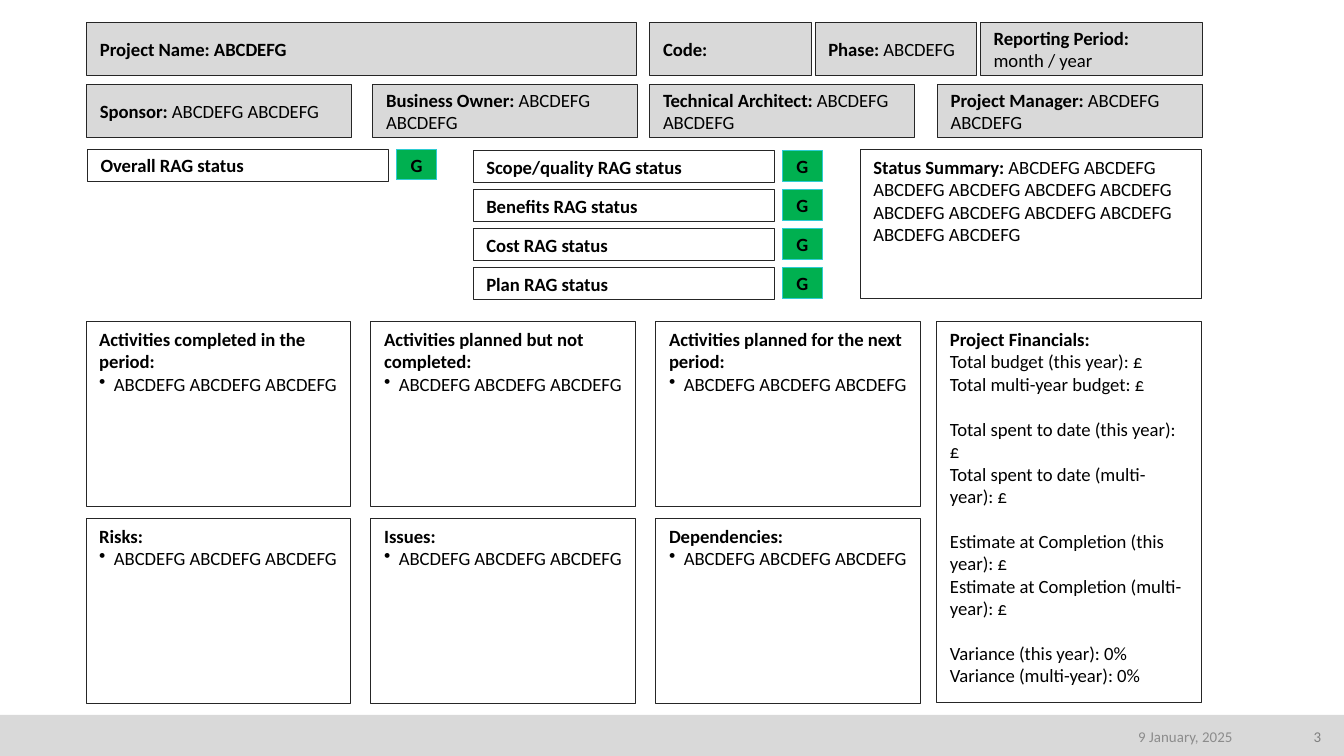
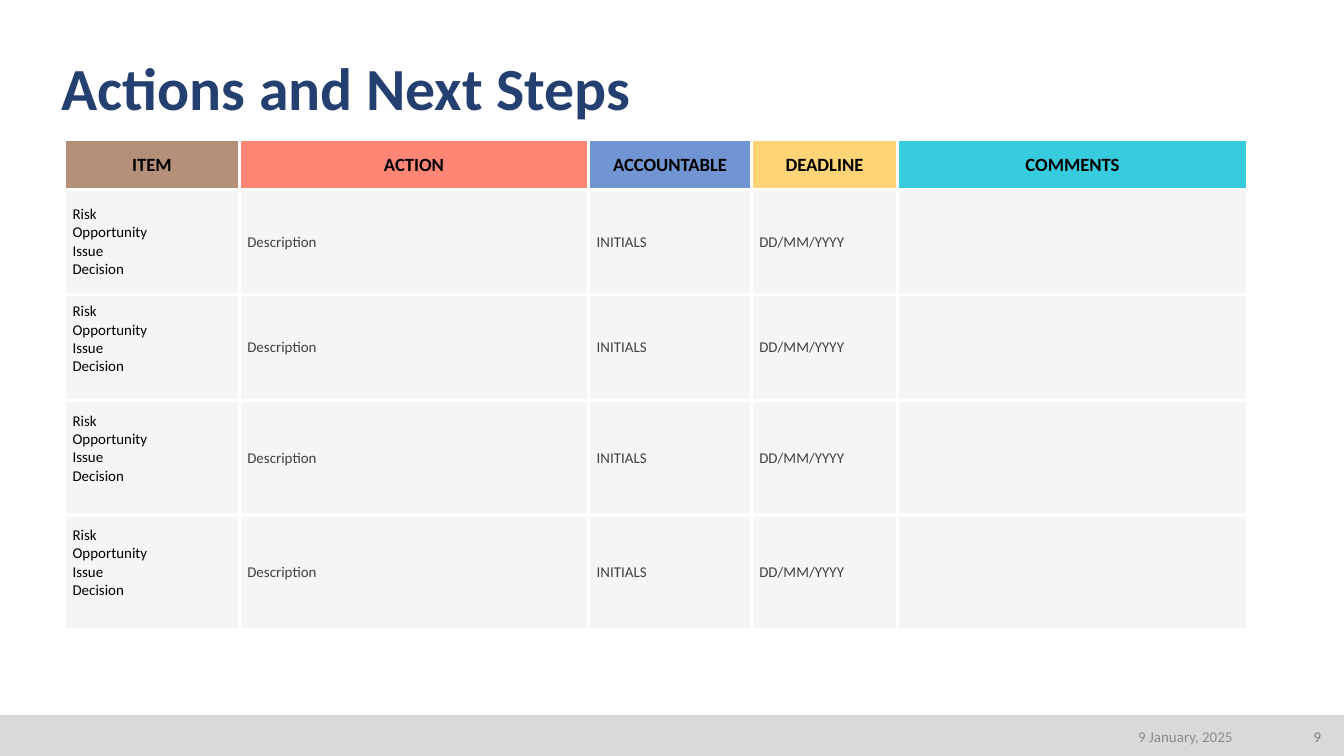
from collections import namedtuple

from lxml import etree
from pptx import Presentation
from pptx import util as u
from pptx.dml.color import RGBColor
from pptx.enum import shapes, text
from pptx.oxml.ns import qn

COLOURS = {
    "band": "D9D9D9", "outline": "262626", "ink": "000000", "title": "244071",
    "green": "00B050", "green_edge": "2DCCD3", "number": "808080", "date": "8C8C8C",
    "cell": "F5F5F5", "cell_text": "404040", "white": "FFFFFF", "item": "B39077",
    "action": "FF8674", "accountable": "7194D2", "deadline": "FFD477", "comments": "36CCDE",
}
FONT = "Calibri"
WIDTH, HEIGHT = 10, 5.625
UNIT = 0.1
FILLER = "ABCDEFG"
LEFT, CENTRE = text.PP_ALIGN.LEFT, text.PP_ALIGN.CENTER
RIGHT, JUSTIFY = text.PP_ALIGN.RIGHT, text.PP_ALIGN.JUSTIFY
TOP, MIDDLE, BOTTOM = text.MSO_ANCHOR.TOP, text.MSO_ANCHOR.MIDDLE, text.MSO_ANCHOR.BOTTOM


class Box(namedtuple("Box", "left top width height")):
    def area(self, column, row, columns, rows):
        return Box(self.left + column * UNIT, self.top + row * UNIT,
                   columns * UNIT, rows * UNIT)

    def lengths(self):
        return [u.Inches(value) for value in self]


def colour(name):
    return RGBColor.from_string(COLOURS[name])


def apply(target, values):
    for name, value in values.items():
        setattr(target, name, value)


def add_span(para, words, bold=False, size=10, ink="ink"):
    span = para.add_run()
    span.text = words
    apply(span.font, {"name": FONT, "size": u.Pt(size), "bold": bold})
    span.font.color.rgb = colour(ink)


def add_bullet(para):
    properties = para._p.get_or_add_pPr()
    properties.set("marL", str(u.Inches(0.11)))
    properties.set("indent", str(u.Inches(-0.11)))
    etree.SubElement(properties, qn("a:buChar")).set("char", "•")


def add_paragraph(frame, index, **values):
    para = frame.add_paragraph() if index else frame.paragraphs[0]
    apply(para, values)
    return para


def add_label(page, box, words, bold=False, size=10, ink="ink", align=LEFT,
              anchor=MIDDLE, margins=None, spacing=None):
    frame = page.shapes.add_textbox(*box.lengths()).text_frame
    apply(frame, {"word_wrap": True, "vertical_anchor": anchor})
    apply(frame, margins or {})
    add_span(add_paragraph(frame, 0, alignment=align, line_spacing=spacing),
             words, bold, size, ink)


def add_rectangle(page, box, fill=None, line=None):
    shape = page.shapes.add_shape(shapes.MSO_SHAPE.RECTANGLE, *box.lengths())
    shape.shadow.inherit = False
    if fill:
        shape.fill.solid()
        shape.fill.fore_color.rgb = colour(fill)
    else:
        shape.fill.background()
    if line:
        shape.line.color.rgb = colour(line)
        shape.line.width = u.Pt(0.5)
    else:
        shape.line.fill.background()
    return shape


def add_field(page, box, heading, value="", fill=None, line="outline",
              align=LEFT, anchor=MIDDLE):
    frame = add_rectangle(page, box, fill, line).text_frame
    apply(frame, {"word_wrap": True, "vertical_anchor": anchor})
    para = add_paragraph(frame, 0, alignment=align)
    add_span(para, heading, bold=True)
    if value:
        add_span(para, value)
    return frame


def add_footer(page, box, number):
    add_rectangle(page, box, "band")
    add_label(page, box.area(70.2, 0.3, 22.5, 2.6), "9 January, 2025",
              size=8, ink="date", align=RIGHT)
    add_label(page, box.area(95.6, 0.3, 3.7, 2.6), number,
              size=8, ink="number", align=RIGHT)


def add_project_header(page, box):
    for column, columns, heading, value in [
        (0, 40.9, f"Project Name: {FILLER}", ""),
        (41.9, 12, "Code:", ""),
        (54.2, 12, "Phase: ", FILLER),
        (66.5, 16.5, "Reporting Period: ", "month / year"),
    ]:
        add_field(page, box.area(column, 0, columns, 3.9), heading, value, "band")
    roles = ["Sponsor", "Business Owner", "Technical Architect", "Project Manager"]
    for column, role in zip([0, 21.3, 41.9, 63.3], roles):
        add_field(page, box.area(column, 4.6, 19.7, 3.9), f"{role}: ",
                  f"{FILLER} {FILLER}", "band")


def add_rating(page, box, name):
    add_field(page, box.area(0, 0, 22.4, 2.4), f"{name} RAG status")
    add_field(page, box.area(23, 0, 3, 2.3), "G", fill="green",
              line="green_edge", align=CENTRE)


def add_status(page, box):
    add_rating(page, box.area(0, 0, 26, 2.4), "Overall")
    for index, name in enumerate(["Scope/quality", "Benefits", "Cost", "Plan"]):
        add_rating(page, box.area(28.7, 0.1 + 2.9 * index, 26, 2.4), name)
    add_field(page, box.area(57.5, 0, 25.4, 11.1), "Status Summary: ",
              " ".join([FILLER] * 12), anchor=TOP)


def add_panels(page, box):
    headings = [
        "Activities completed in the period:",
        "Activities planned but not completed:",
        "Activities planned for the next period:",
        "Risks:", "Issues:", "Dependencies:",
    ]
    for index, heading in enumerate(headings):
        row, column = divmod(index, 3)
        frame = add_field(page, box.area(21.2 * column, 14.65 * row, 19.7, 13.8),
                          heading, anchor=TOP)
        para = add_paragraph(frame, 1)
        add_bullet(para)
        add_span(para, " ".join([FILLER] * 3))


def add_financials(page, box):
    groups = [
        ["Total budget (this year): £", "Total multi-year budget: £"],
        ["Total spent to date (this year): £", "Total spent to date (multi-year): £"],
        ["Estimate at Completion (this year): £", "Estimate at Completion (multi-year): £"],
        ["Variance (this year): 0%", "Variance (multi-year): 0%"],
    ]
    frame = add_field(page, box, "Project Financials:", anchor=TOP)
    for group_index, group in enumerate(groups):
        for line_index, words in enumerate(group):
            gap = 12 if group_index and not line_index else 0
            add_span(add_paragraph(frame, 1, space_before=u.Pt(gap)), words)


def set_borders(cell):
    properties = cell._tc.get_or_add_tcPr()
    for index, side in enumerate("LRTB"):
        line = etree.Element(qn(f"a:ln{side}"), w=str(u.Pt(2)))
        fill = etree.SubElement(line, qn("a:solidFill"))
        etree.SubElement(fill, qn("a:srgbClr")).set("val", COLOURS["white"])
        properties.insert(index, line)


def fill_cell(cell, lines, fill, align=LEFT, bottom=0.06, **font):
    margins = dict.fromkeys(["margin_left", "margin_right", "margin_top"], u.Inches(0.06))
    apply(cell, {**margins, "margin_bottom": u.Inches(bottom), "vertical_anchor": MIDDLE})
    cell.fill.solid()
    cell.fill.fore_color.rgb = colour(fill)
    set_borders(cell)
    for index, words in enumerate(lines):
        add_span(add_paragraph(cell.text_frame, index, alignment=align), words, **font)


def add_action_table(page, box):
    columns = [1.3, 2.6, 1.21, 1.09, 2.6]
    rows = [0.37, 0.78, 0.78, 0.85, 0.85]
    table = page.shapes.add_table(len(rows), len(columns), *box.lengths()).table
    apply(table, {"first_row": False, "horz_banding": False})
    for column, width in zip(table.columns, columns):
        column.width = u.Inches(width)
    for row, height in zip(table.rows, rows):
        row.height = u.Inches(height)
    for index, name in enumerate(["item", "action", "accountable", "deadline", "comments"]):
        fill_cell(table.cell(0, index), [name.upper()], name, CENTRE, bold=True)
    for row in range(1, len(rows)):
        fill_cell(table.cell(row, 0), ["Risk", "Opportunity", "Issue", "Decision"],
                  "cell", JUSTIFY, 0.06 if row == 1 else 0.2, size=8)
        for column, words in enumerate(["Description", "INITIALS", "DD/MM/YYYY"], 1):
            fill_cell(table.cell(row, column), [words], "cell", size=8, ink="cell_text")
        fill_cell(table.cell(row, 4), [], "cell")


def add_page(deck, box, number):
    page = deck.slides.add_slide(deck.slide_layouts[6])
    add_footer(page, box.area(0, 53.2, 100, 3.05), number)
    return page


def add_report(deck, box):
    page = add_page(deck, box, "3")
    add_project_header(page, box.area(6.45, 1.7, 83, 8.5))
    add_status(page, box.area(6.5, 11.1, 82.9, 11.1))
    add_panels(page, box.area(6.4, 23.9, 62.1, 28.4))
    add_financials(page, box.area(69.7, 23.9, 19.7, 28.4))


def add_actions(deck, box):
    page = add_page(deck, box, "9")
    margins = dict.fromkeys(
        ["margin_left", "margin_right", "margin_top", "margin_bottom"], 0)
    add_label(page, box.area(4.6, 4, 91, 5.2), "Actions and Next Steps", True, 32,
              "title", anchor=BOTTOM, margins=margins, spacing=0.9)
    add_action_table(page, box.area(4.8, 10.4, 87.9, 36.3))


def main():
    deck = Presentation()
    apply(deck, {"slide_width": u.Inches(WIDTH), "slide_height": u.Inches(HEIGHT)})
    box = Box(0, 0, WIDTH, HEIGHT)
    add_report(deck, box)
    add_actions(deck, box)
    deck.save("out.pptx")


if __name__ == "__main__":
    main()
